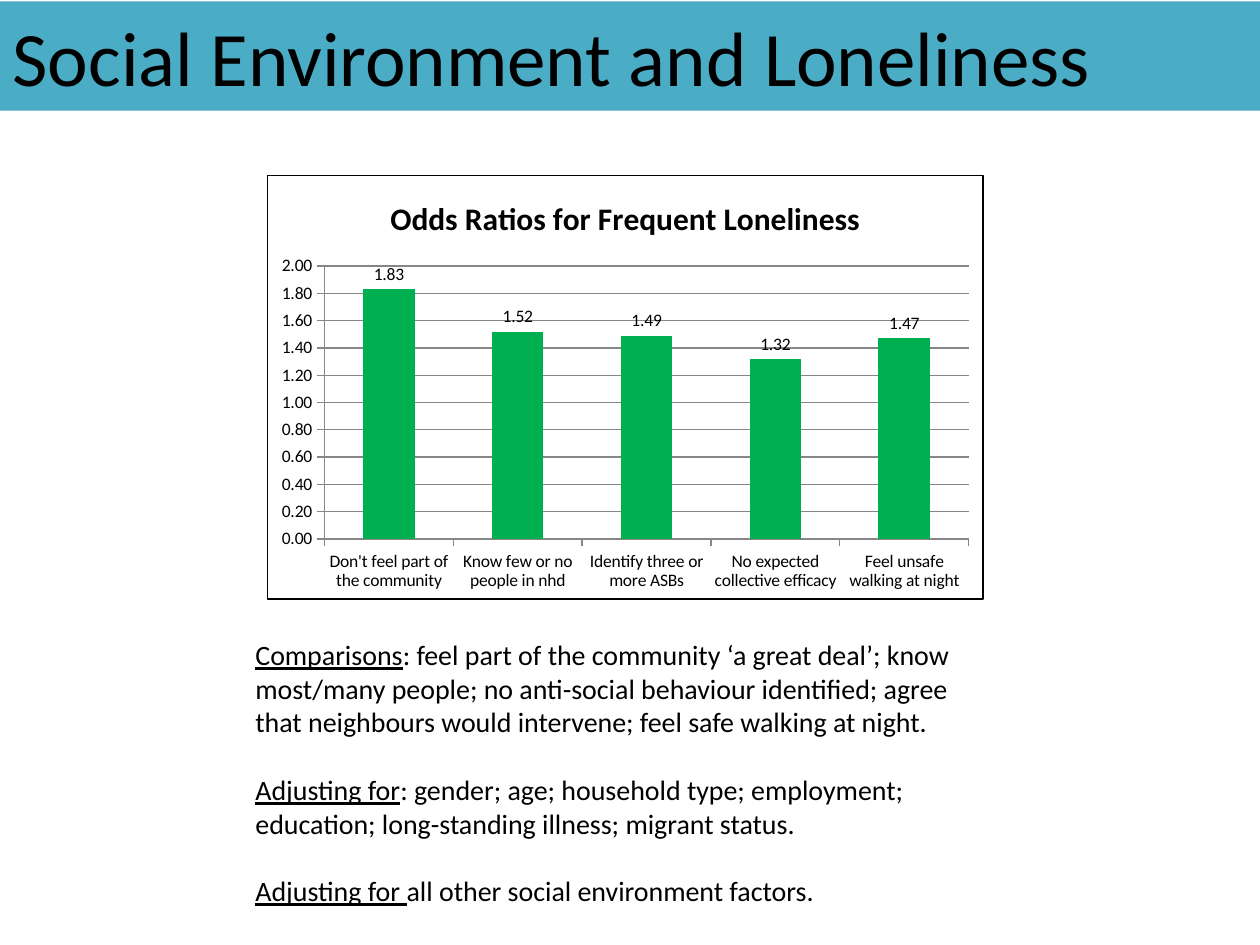
"""Build a slide on social environment and loneliness with a column chart."""
from dataclasses import dataclass

from pptx import Presentation
from pptx import util as u
from pptx.chart.data import CategoryChartData
from pptx.dml.color import RGBColor
from pptx.enum import chart as kinds, text
from pptx.oxml import parse_xml
from pptx.oxml.ns import nsdecls


@dataclass(frozen=True)
class Theme:
    """Colours, font and type sizes of the slide."""
    font: str = "Calibri"
    ink: str = "000000"
    band: str = "4BACC6"
    bar: str = "00B050"
    grid: str = "868686"
    title: int = 44
    chart_title: int = 18
    body: int = 16
    label: int = 10


THEME = Theme()
ODDS = {
    "Don't feel part of the community": 1.83,
    "Know few or no people in nhd": 1.52,
    "Identify three or more ASBs": 1.49,
    "No expected collective efficacy": 1.32,
    "Feel unsafe walking at night": 1.47,
}
NOTES = [
    ("Comparisons", ": feel part of the community ‘a great deal’; know most/many "
     "people; no anti-social behaviour identified; agree that neighbours would "
     "intervene; feel safe walking at night."),
    ("Adjusting for", ": gender; age; household type; employment; education; "
     "long-standing illness; migrant status."),
    ("Adjusting for ", "all other social environment factors."),
]


def style_font(font, size, bold=False, underline=False):
    """Apply the theme font and ink at the given size."""
    font.name, font.size = THEME.font, u.Pt(size)
    font.bold, font.underline = bold, underline
    font.color.rgb = RGBColor.from_string(THEME.ink)


def add_span(para, words, **style):
    """Append formatted text to a paragraph."""
    span = para.add_run()
    span.text = words
    style_font(span.font, **style)


def place(shape, left, top, width, height):
    """Set a shape's position and size in centimetres."""
    shape.left, shape.top = u.Cm(left), u.Cm(top)
    shape.width, shape.height = u.Cm(width), u.Cm(height)


def set_title(page, words):
    """Turn the title placeholder into a coloured band."""
    title = page.shapes.title
    place(title, 0, 0.03, 25.4, 2.2)
    title.fill.solid()
    title.fill.fore_color.rgb = RGBColor.from_string(THEME.band)
    frame = title.text_frame
    frame.auto_size = text.MSO_AUTO_SIZE.NONE
    frame.vertical_anchor = text.MSO_ANCHOR.MIDDLE
    para = frame.paragraphs[0]
    para.alignment = text.PP_ALIGN.LEFT
    add_span(para, words, size=THEME.title)


def frame_chart(chart):
    """Give the chart area a thin outline."""
    border = parse_xml(
        f'<c:spPr {nsdecls("c", "a")}><a:noFill/><a:ln w="{u.Pt(0.75)}"><a:solidFill>'
        f'<a:srgbClr val="{THEME.ink}"/></a:solidFill></a:ln></c:spPr>')
    chart.element.find(f"{{{border.nsmap['c']}}}chart").addnext(border)


def style_axes(chart):
    """Set the scale, number format and lines of both axes."""
    values = chart.value_axis
    values.minimum_scale, values.maximum_scale, values.major_unit = 0, 2, 0.2
    values.has_major_gridlines = True
    values.tick_labels.number_format = "#,##0.00"
    values.tick_labels.number_format_is_linked = False
    for axis in (values, chart.category_axis):
        axis.major_tick_mark = kinds.XL_TICK_MARK.OUTSIDE
    for part in (values, chart.category_axis, values.major_gridlines):
        part.format.line.color.rgb = RGBColor.from_string(THEME.grid)
        part.format.line.width = u.Pt(0.75)


def add_column_chart(page, heading, odds):
    """Add the outlined column chart with value labels."""
    data = CategoryChartData(number_format="0.00")
    data.categories = list(odds)
    data.add_series("Series 1", list(odds.values()))
    chart = page.shapes.add_chart(
        kinds.XL_CHART_TYPE.COLUMN_CLUSTERED,
        u.Cm(5.38), u.Cm(3.53), u.Cm(14.45), u.Cm(8.56), data).chart
    style_font(chart.font, THEME.label)
    chart.has_legend = False
    chart.has_title = True
    add_span(chart.chart_title.text_frame.paragraphs[0], heading,
             size=THEME.chart_title, bold=True)
    plot = chart.plots[0]
    plot.gap_width, plot.vary_by_categories = 150, False
    series = plot.series[0]
    series.format.fill.solid()
    series.format.fill.fore_color.rgb = RGBColor.from_string(THEME.bar)
    series.data_labels.show_value = True
    series.data_labels.position = kinds.XL_LABEL_POSITION.OUTSIDE_END
    style_axes(chart)
    frame_chart(chart)


def add_notes(page, notes):
    """Add paragraphs that each open with an underlined term."""
    box = page.shapes.add_textbox(u.Cm(4.9), u.Cm(12.73), u.Cm(15.4), u.Cm(6.4))
    frame = box.text_frame
    frame.word_wrap = True
    for index, (term, detail) in enumerate(notes):
        para = frame.add_paragraph() if index else frame.paragraphs[0]
        para.space_before = u.Pt(19.5 if index else 0)
        add_span(para, term, size=THEME.body, underline=True)
        add_span(para, detail, size=THEME.body)


def main():
    """Build and save the slide."""
    deck = Presentation()
    deck.slide_width, deck.slide_height = u.Cm(25.4), u.Cm(19.05)
    page = deck.slides.add_slide(deck.slide_layouts.get_by_name("Title Only"))
    add_notes(page, NOTES)
    set_title(page, "Social Environment and Loneliness")
    add_column_chart(page, "Odds Ratios for Frequent Loneliness", ODDS)
    deck.save("out.pptx")


if __name__ == "__main__":
    main()
